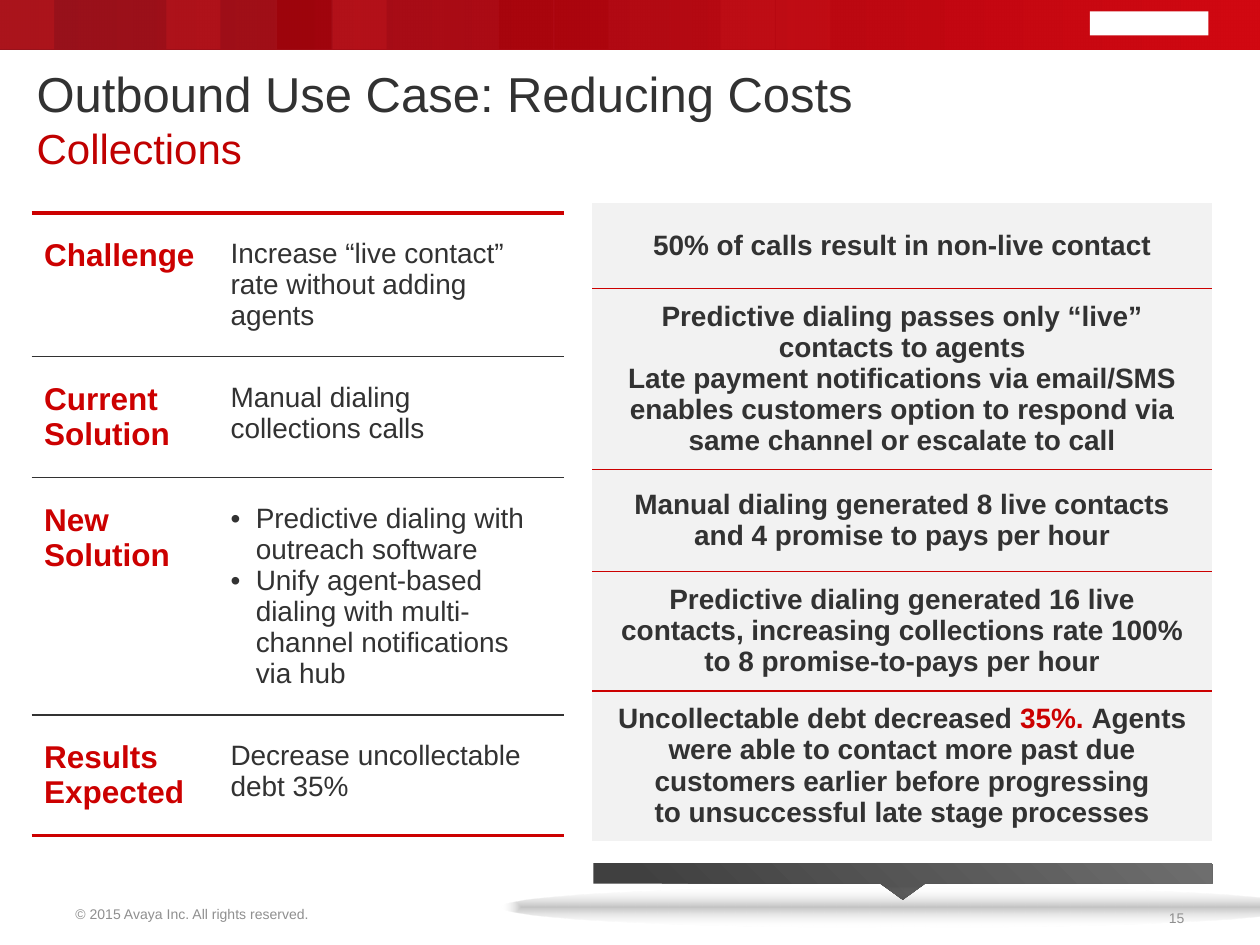
from lxml.etree import SubElement
from pptx import Presentation
from pptx.dml.color import RGBColor
from pptx.enum.shapes import MSO_SHAPE
from pptx.enum.text import MSO_ANCHOR, MSO_AUTO_SIZE, PP_ALIGN
from pptx.oxml.ns import qn
from pptx.util import Inches, Pt

COLORS = {
    "text": "323232", "red": "CC0000", "subtitle": "C00000", "footer": "8F8F8F",
    "panel": "F2F2F2", "white": "FFFFFF", "black": "000000",
    "bar_start": "91050F", "bar_end": "D10811",
    "block_light": "FF4747", "block_dark": "990000",
    "callout_start": "404040", "callout_end": "6E6E6E",
}

USE_CASE = [
    ("Challenge", ["Increase “live contact” rate without adding agents"], 1.14),
    ("Current Solution", ["Manual dialing\ncollections calls"], 0.96),
    ("New\nSolution", ["Predictive dialing with outreach software",
                       "Unify agent-based dialing with multi-channel notifications via hub"], 1.88),
    ("Results Expected", ["Decrease uncollectable debt 35%"], 0.96),
]

OUTCOMES = [
    ([[("50% of calls result in non-live contact", "text")]], 0.68),
    ([[("Predictive dialing passes only “live” contacts to agents", "text")],
      [("Late payment notifications via email/SMS enables customers option to respond via "
        "same channel or escalate to call", "text")]], 1.43),
    ([[("Manual dialing generated 8 live contacts and 4 promise to pays per hour", "text")]], 0.81),
    ([[("Predictive dialing generated 16 live contacts, increasing collections rate 100% "
        "to 8 promise-to-pays per hour", "text")]], 0.95),
    ([[("Uncollectable debt decreased ", "text"), ("35%. ", "red"),
       ("Agents were able to contact more past due customers earlier before progressing\n"
        "to unsuccessful late stage processes", "text")]], 1.18),
]


def rgb(name):
    return RGBColor.from_string(COLORS[name])


def add_text(p, text, size, color, bold=False):
    for i, line in enumerate(text.split("\n")):
        if i:
            p.add_line_break()
        r = p.add_run()
        r.text = line
        r.font.name = "Arial"
        r.font.size = Pt(size)
        r.font.bold = bold
        r.font.color.rgb = rgb(color)


def add_shape(s, kind, box, color=None):
    sp = s.shapes.add_shape(kind, *map(Inches, box))
    sp.shadow.inherit = False
    sp.line.fill.background()
    if color:
        sp.fill.solid()
        sp.fill.fore_color.rgb = rgb(color)
    return sp


def set_gradient(sp, stops, angle=None):
    sp.fill.gradient()
    grad = sp._element.spPr.find(qn("a:gradFill"))
    for child in list(grad):
        grad.remove(child)
    stop_list = SubElement(grad, qn("a:gsLst"))
    for pos, color, alpha in stops:
        stop = SubElement(stop_list, qn("a:gs"), pos=str(pos * 1000))
        clr = SubElement(stop, qn("a:srgbClr"), val=COLORS[color])
        SubElement(clr, qn("a:alpha"), val=str(alpha * 1000))
    if angle is None:
        path = SubElement(grad, qn("a:path"), path="shape")
        SubElement(path, qn("a:fillToRect"), l="50000", t="50000", r="50000", b="50000")
    else:
        SubElement(grad, qn("a:lin"), ang=str(angle * 60000), scaled="0")


def set_borders(cell, top=None, bottom=None):
    tc_pr = cell._tc.get_or_add_tcPr()
    for tag, border in (("lnL", None), ("lnR", None), ("lnT", top), ("lnB", bottom)):
        color, width = border or (None, 0)
        ln = SubElement(tc_pr, qn(f"a:{tag}"), w=str(Pt(width)))
        if color:
            fill = SubElement(ln, qn("a:solidFill"))
            SubElement(fill, qn("a:srgbClr"), val=COLORS[color])
        else:
            SubElement(ln, qn("a:noFill"))


def add_grid(s, left, top, widths, heights):
    frame = s.shapes.add_table(len(heights), len(widths), Inches(left), Inches(top),
                               Inches(sum(widths)), Inches(sum(heights)))
    table = frame.table
    table.first_row = table.horz_banding = False
    for column, width in zip(table.columns, widths):
        column.width = Inches(width)
    for row, height in zip(table.rows, heights):
        row.height = Inches(height)
    return table


def set_margins(cell, side, end):
    cell.margin_left = cell.margin_right = Inches(side)
    cell.margin_top = cell.margin_bottom = Inches(end)


def add_paragraph(tf, index):
    return tf.add_paragraph() if index else tf.paragraphs[0]


def header(s, left, top, width, height):
    blocks = [(14, "block_light"), (13, "block_light"), (10, "block_dark"), (9, "block_dark"),
              (6, "block_light"), (5, "block_dark"), (3, "block_light"), (0, "block_light")]
    stops = [(0, "bar_start", 76), (100, "bar_end", 100)]
    set_gradient(add_shape(s, MSO_SHAPE.RECTANGLE, (left, top, width, height)), stops, 0)
    for slot, color in blocks:
        add_shape(s, MSO_SHAPE.RECTANGLE, (left + slot * 0.44, top, 0.43, height), color)
    set_gradient(add_shape(s, MSO_SHAPE.RECTANGLE, (left, top, width, height)), stops, 0)
    add_shape(s, MSO_SHAPE.RECTANGLE, (left + 8.65, top + 0.1, 0.94, 0.19), "white")


def title(s, *box):
    sp = s.shapes.title
    sp.left, sp.top, sp.width, sp.height = map(Inches, box)
    tf = sp.text_frame
    tf.auto_size = MSO_AUTO_SIZE.NONE
    tf.word_wrap = True
    tf.vertical_anchor = MSO_ANCHOR.MIDDLE
    p = tf.paragraphs[0]
    p.alignment = PP_ALIGN.LEFT
    add_text(p, "Outbound Use Case: Reducing Costs", 28, "text")
    p.add_line_break()
    add_text(p, "Collections", 24, "subtitle")


def use_case_table(s, left, top, widths):
    table = add_grid(s, left, top, widths, [height for _, _, height in USE_CASE])
    last = len(USE_CASE) - 1
    for i, (label, details, _) in enumerate(USE_CASE):
        for cell in table.rows[i].cells:
            set_margins(cell, 0.1, 0.2)
            set_borders(cell, ("text", 1) if i else ("red", 2.25),
                        ("red", 2.25) if i == last else ("text", 1))
            cell.fill.background()
        add_text(table.cell(i, 0).text_frame.paragraphs[0], label, 18, "red", True)
        for j, detail in enumerate(details):
            p = add_paragraph(table.cell(i, 1).text_frame, j)
            if len(details) > 1:
                p_pr = p._p.get_or_add_pPr()
                p_pr.set("marL", str(Inches(0.2)))
                p_pr.set("indent", str(Inches(-0.2)))
                SubElement(p_pr, qn("a:buFont"), typeface="Arial")
                SubElement(p_pr, qn("a:buChar"), char="•")
            add_text(p, detail, 16, "text")


def outcome_table(s, left, top, width):
    table = add_grid(s, left, top, [width], [height for _, height in OUTCOMES])
    last = len(OUTCOMES) - 1
    for i, (paragraphs, _) in enumerate(OUTCOMES):
        cell = table.cell(i, 0)
        set_margins(cell, 0.2, 0.1)
        cell.vertical_anchor = MSO_ANCHOR.MIDDLE
        set_borders(cell, ("red", 1) if i else None, ("red", 1) if i < last else None)
        cell.fill.solid()
        cell.fill.fore_color.rgb = rgb("panel")
        for j, runs in enumerate(paragraphs):
            p = add_paragraph(cell.text_frame, j)
            p.alignment = PP_ALIGN.CENTER
            for text, color in runs:
                add_text(p, text, 16, color, True)


def callout(s, left, top, width, height):
    box = (left + (width - height) / 2, top + (height - width) / 2, height, width)
    sp = add_shape(s, MSO_SHAPE.RIGHT_ARROW_CALLOUT, box)
    for i, value in enumerate((0.77, 0.61, 0.44, 0.75)):
        sp.adjustments[i] = value
    set_gradient(sp, [(9, "callout_start", 100), (100, "callout_end", 100)], 135)
    sp.rotation = 90
    sp._element.spPr.xfrm.set("flipV", "1")
    glow = add_shape(s, MSO_SHAPE.OVAL, (left - 0.73, top + 0.19, 6.37, 0.32))
    set_gradient(glow, [(0, "black", 23), (100, "white", 0)])


def footer_text(s, text, align, *box):
    tf = s.shapes.add_textbox(*map(Inches, box)).text_frame
    tf.word_wrap = False
    tf.vertical_anchor = MSO_ANCHOR.MIDDLE
    p = tf.paragraphs[0]
    p.alignment = align
    p.line_spacing = 0.9
    add_text(p, text, 8, "footer")


def main():
    prs = Presentation()
    prs.slide_width, prs.slide_height = Inches(10), Inches(7.5)
    s = prs.slides.add_slide(prs.slide_layouts[5])
    header(s, 0, -0.01, 10, 0.4)
    title(s, 0.19, 0.48, 9, 0.92)
    outcome_table(s, 4.7, 1.61, 4.92)
    callout(s, 4.71, 6.85, 4.91, 0.29)
    use_case_table(s, 0.25, 1.69, [1.48, 2.75])
    footer_text(s, "© 2015 Avaya Inc. All rights reserved.", PP_ALIGN.LEFT, 0.5, 7.15, 2.09, 0.22)
    footer_text(s, "15", PP_ALIGN.RIGHT, 9.16, 7.18, 0.34, 0.22)
    prs.save("out.pptx")


if __name__ == "__main__":
    main()
